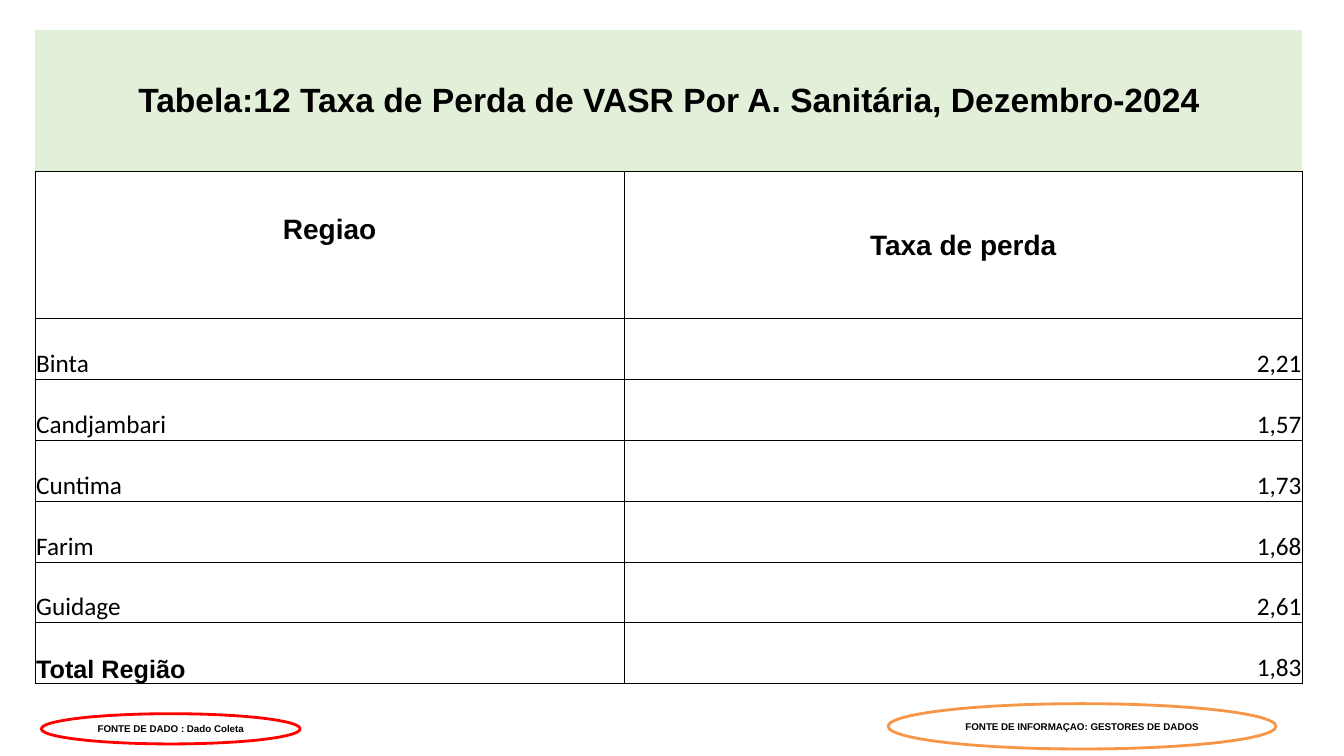
from lxml.etree import SubElement
from pptx import Presentation
from pptx.dml.color import RGBColor
from pptx.enum.shapes import MSO_SHAPE
from pptx.enum.text import MSO_ANCHOR, PP_ALIGN
from pptx.oxml.ns import qn
from pptx.util import Pt

BLACK = RGBColor(0x00, 0x00, 0x00)
WHITE = RGBColor(0xFF, 0xFF, 0xFF)
GREEN = RGBColor(0xE2, 0xF0, 0xD9)
RED = RGBColor(0xFF, 0x00, 0x00)
ORANGE = RGBColor(0xF7, 0x96, 0x46)

TITLE = "Tabela:12 Taxa de Perda de VASR Por A. Sanitária, Dezembro-2024"
HEADERS = ("Regiao", "Taxa de perda")
RATES = [
    ("Binta", "2,21"),
    ("Candjambari", "1,57"),
    ("Cuntima", "1,73"),
    ("Farim", "1,68"),
    ("Guidage", "2,61"),
    ("Total Região", "1,83"),
]
COL_WIDTHS = (420.6, 484.6)
TITLE_HEIGHT, HEADER_HEIGHT, RATE_HEIGHT = 100.8, 105.2, 43.45


def write(tf, text, size, font="Arial", bold=True, align=PP_ALIGN.CENTER):
    tf.text = text
    p = tf.paragraphs[0]
    p.alignment = align
    r = p.runs[0]
    r.font.size = Pt(size)
    r.font.name = font
    r.font.bold = bold
    r.font.color.rgb = BLACK


def set_borders(cell, sides):
    """Draw thin black lines on the given sides and hide the others."""
    tc_pr = cell._tc.get_or_add_tcPr()
    for side in "LRTB":
        ln = SubElement(tc_pr, qn(f"a:ln{side}"), w=str(Pt(0.5)))
        if side in sides:
            fill = SubElement(ln, qn("a:solidFill"))
            SubElement(fill, qn("a:srgbClr"), val=str(BLACK))
        else:
            SubElement(ln, qn("a:noFill"))


def format_cell(cell, anchor, sides="LRTB", fill=None):
    cell.margin_left = cell.margin_right = cell.margin_top = Pt(0.7)
    cell.margin_bottom = Pt(0)
    cell.vertical_anchor = anchor
    set_borders(cell, sides)
    if fill is None:
        cell.fill.background()
    else:
        cell.fill.solid()
        cell.fill.fore_color.rgb = fill


def add_rate_table(slide):
    heights = [TITLE_HEIGHT, HEADER_HEIGHT] + [RATE_HEIGHT] * len(RATES)
    frame = slide.shapes.add_table(
        len(heights), len(COL_WIDTHS), Pt(25.2), Pt(21.6),
        Pt(sum(COL_WIDTHS)), Pt(sum(heights)))
    table = frame.table
    table.first_row = table.horz_banding = False
    for column, width in zip(table.columns, COL_WIDTHS):
        column.width = Pt(width)
    for row, height in zip(table.rows, heights):
        row.height = Pt(height)

    # Title across both columns
    for cell in table.rows[0].cells:
        format_cell(cell, MSO_ANCHOR.MIDDLE, "B", GREEN)
    table.cell(0, 0).merge(table.cell(0, 1))
    write(table.cell(0, 0).text_frame, TITLE, 24)

    # Column headers; the first one sits a little higher
    for cell, text in zip(table.rows[1].cells, HEADERS):
        format_cell(cell, MSO_ANCHOR.MIDDLE)
        write(cell.text_frame, text, 20)
    table.cell(1, 0).margin_bottom = Pt(22)

    # Loss rate of each area
    for i, (area, rate) in enumerate(RATES, start=2):
        total = i == len(heights) - 1
        area_cell, rate_cell = table.rows[i].cells
        format_cell(area_cell, MSO_ANCHOR.BOTTOM)
        format_cell(rate_cell, MSO_ANCHOR.BOTTOM)
        write(area_cell.text_frame, area, 18, "Arial" if total else "Calibri",
              total, PP_ALIGN.LEFT)
        write(rate_cell.text_frame, rate, 18, "Calibri", False, PP_ALIGN.RIGHT)


def add_source_oval(slide, text, left, top, width, height, color, fill=None):
    sp = slide.shapes.add_shape(
        MSO_SHAPE.OVAL, Pt(left), Pt(top), Pt(width), Pt(height))
    sp.shadow.inherit = False
    if fill is None:
        sp.fill.background()
    else:
        sp.fill.solid()
        sp.fill.fore_color.rgb = fill
    sp.line.color.rgb = color
    sp.line.width = Pt(2)
    tf = sp.text_frame
    tf.word_wrap = True
    tf.vertical_anchor = MSO_ANCHOR.MIDDLE
    tf.margin_top = tf.margin_bottom = Pt(0)
    write(tf, text, 7)


def main():
    prs = Presentation()
    prs.slide_width, prs.slide_height = Pt(960), Pt(540)
    slide = prs.slides.add_slide(prs.slide_layouts[6])
    add_rate_table(slide)
    # Sources below the table
    add_source_oval(slide, "FONTE DE DADO : Dado Coleta",
                    29.5, 509.8, 185, 21.6, RED)
    add_source_oval(slide, "FONTE DE INFORMAÇAO: GESTORES DE DADOS",
                    634.3, 502.6, 277.2, 32.4, ORANGE, WHITE)
    prs.save("out.pptx")


if __name__ == "__main__":
    main()
